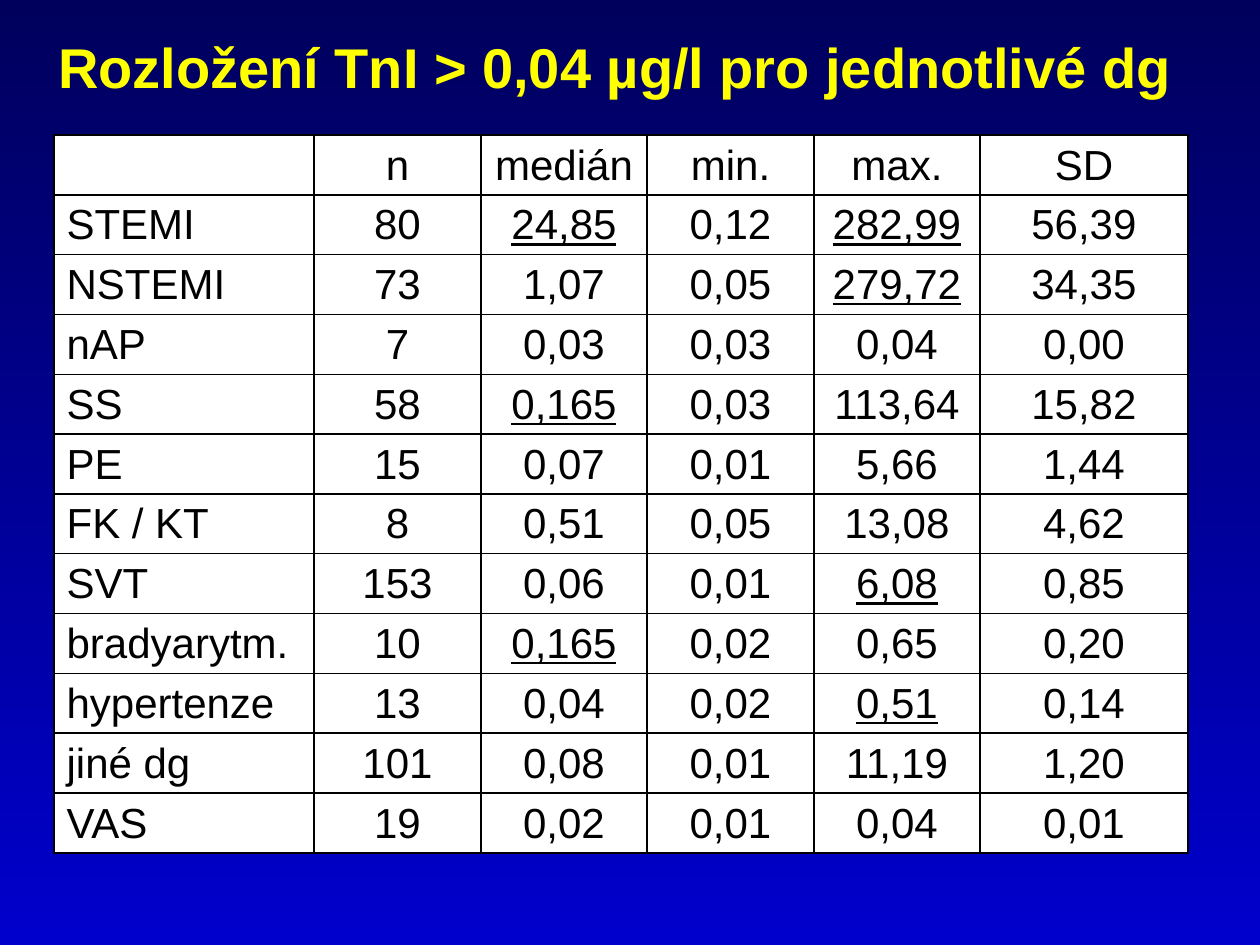
from dataclasses import dataclass
from itertools import pairwise

from lxml import etree
from pptx import Presentation
from pptx.dml.color import RGBColor
from pptx.enum.text import MSO_ANCHOR, PP_ALIGN
from pptx.oxml.ns import qn
from pptx.util import Emu, Pt

EMU_PER_PX = 914400 / 126
LEFT, CENTER = PP_ALIGN.LEFT, PP_ALIGN.CENTER
MIDDLE, BOTTOM = MSO_ANCHOR.MIDDLE, MSO_ANCHOR.BOTTOM
FONT = "Arial"
COLORS = {
    "sky_top": "00005C",
    "sky_bottom": "0000CC",
    "title": "FFFF00",
    "cell": "FFFFFF",
    "ink": "000000",
}

TABLE_TOP, TABLE_HEIGHT = 135, 718
CELL_MARGIN_TOP, CELL_MARGIN_BOTTOM = 1, 6
COLUMN_EDGES = [54, 314, 481, 647, 814, 980, 1188]
MEDIAN, MAXIMUM = 2, 4


@dataclass(frozen=True)
class Diagnosis:
    values: tuple[str, ...]
    underlined: tuple[int, ...] = ()


ROWS = [
    Diagnosis(("", "n", "medián", "min.", "max.", "SD")),
    Diagnosis(("STEMI", "80", "24,85", "0,12", "282,99", "56,39"), (MEDIAN, MAXIMUM)),
    Diagnosis(("NSTEMI", "73", "1,07", "0,05", "279,72", "34,35"), (MAXIMUM,)),
    Diagnosis(("nAP", "7", "0,03", "0,03", "0,04", "0,00")),
    Diagnosis(("SS", "58", "0,165", "0,03", "113,64", "15,82"), (MEDIAN,)),
    Diagnosis(("PE", "15", "0,07", "0,01", "5,66", "1,44")),
    Diagnosis(("FK / KT", "8", "0,51", "0,05", "13,08", "4,62")),
    Diagnosis(("SVT", "153", "0,06", "0,01", "6,08", "0,85"), (MAXIMUM,)),
    Diagnosis(("bradyarytm.", "10", "0,165", "0,02", "0,65", "0,20"), (MEDIAN,)),
    Diagnosis(("hypertenze", "13", "0,04", "0,02", "0,51", "0,14"), (MAXIMUM,)),
    Diagnosis(("jiné dg", "101", "0,08", "0,01", "11,19", "1,20")),
    Diagnosis(("VAS", "19", "0,02", "0,01", "0,04", "0,01")),
]


def px(length: int) -> Emu:
    return Emu(round(length * EMU_PER_PX))


def color(name: str) -> RGBColor:
    return RGBColor.from_string(COLORS[name])


def write(frame, text: str, size: int, ink: str, align, bold=False, underline=False) -> None:
    frame.text = text
    paragraph = frame.paragraphs[0]
    paragraph.alignment = align
    for run in paragraph.runs:
        run.font.name = FONT
        run.font.size = Pt(size)
        run.font.bold = bold
        run.font.underline = underline
        run.font.color.rgb = color(ink)


def add_borders(cell) -> None:
    properties = cell._tc.get_or_add_tcPr()
    for side in ("a:lnL", "a:lnR", "a:lnT", "a:lnB"):
        line = etree.SubElement(properties, qn(side), w=str(Pt(1)))
        fill = etree.SubElement(line, qn("a:solidFill"))
        etree.SubElement(fill, qn("a:srgbClr"), val=COLORS["ink"])


def paint_background(slide) -> None:
    fill = slide.background.fill
    fill.gradient()
    fill.gradient_angle = 270
    for stop, name in zip(fill.gradient_stops, ("sky_top", "sky_bottom")):
        stop.color.rgb = color(name)


def add_title(slide) -> None:
    title = slide.shapes.add_textbox(px(35), px(26), px(1161), px(80)).text_frame
    title.word_wrap = True
    title.vertical_anchor = MIDDLE
    write(title, "Rozložení TnI > 0,04 µg/l pro jednotlivé dg", 32, "title", CENTER, bold=True)


def add_diagnosis_table(slide, diagnoses: list[Diagnosis]) -> None:
    left, right = COLUMN_EDGES[0], COLUMN_EDGES[-1]
    # Rows share the table height equally
    table = slide.shapes.add_table(
        len(diagnoses), len(COLUMN_EDGES) - 1,
        px(left), px(TABLE_TOP), px(right - left), px(TABLE_HEIGHT),
    ).table
    table.first_row = table.horz_banding = False
    for column, (start, end) in zip(table.columns, pairwise(COLUMN_EDGES)):
        column.width = px(end - start)

    for row, diagnosis in zip(table.rows, diagnoses):
        for index, (cell, value) in enumerate(zip(row.cells, diagnosis.values)):
            add_borders(cell)
            cell.fill.solid()
            cell.fill.fore_color.rgb = color("cell")
            cell.vertical_anchor = BOTTOM
            cell.margin_top = px(CELL_MARGIN_TOP)
            cell.margin_bottom = px(CELL_MARGIN_BOTTOM)
            write(cell.text_frame, value, 24, "ink", CENTER if index else LEFT,
                  underline=index in diagnosis.underlined)


def main() -> None:
    presentation = Presentation()
    presentation.slide_width, presentation.slide_height = px(1260), px(945)
    slide = presentation.slides.add_slide(presentation.slide_layouts[6])
    # Background and heading
    paint_background(slide)
    add_title(slide)
    # Troponin statistics by diagnosis
    add_diagnosis_table(slide, ROWS)
    presentation.save("out.pptx")


if __name__ == "__main__":
    main()
